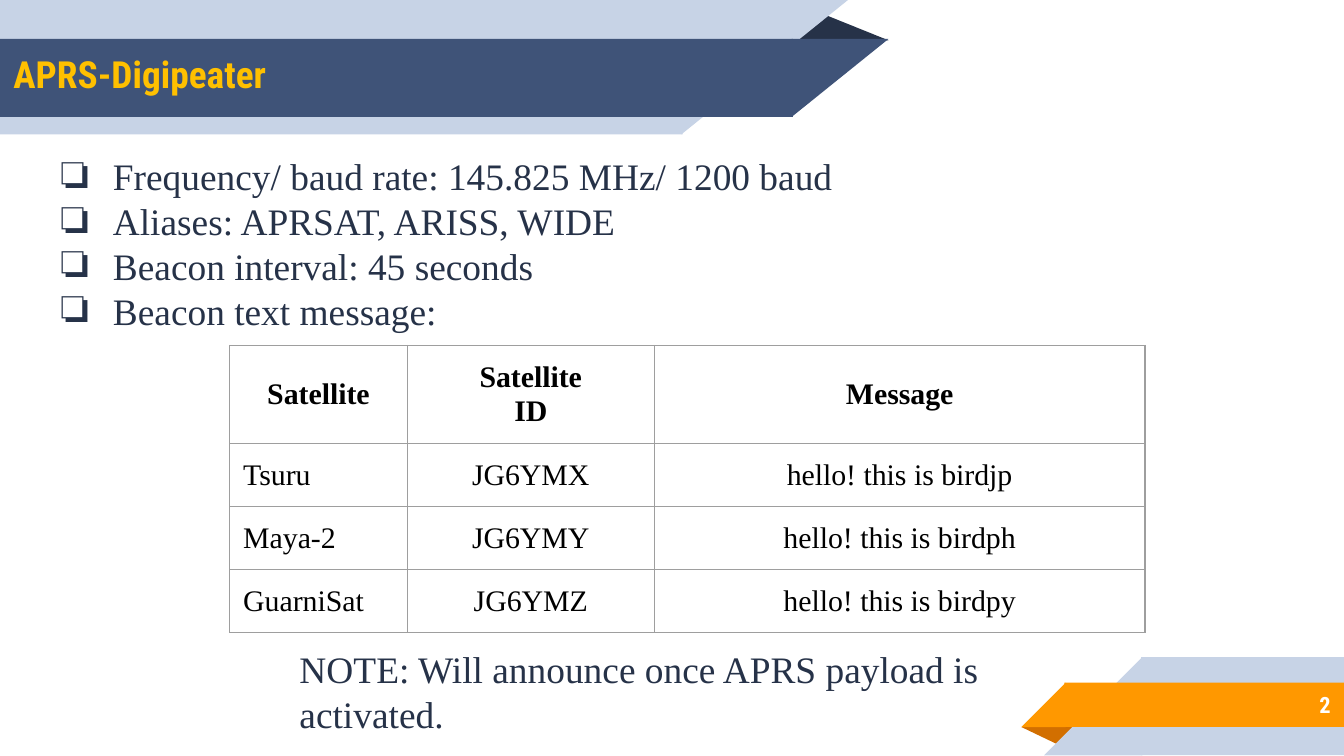
import pptx
import pptx.dml.color
import pptx.enum.shapes
import pptx.enum.text
import pptx.oxml
import pptx.oxml.ns
import pptx.util
from lxml import etree

Inches = pptx.util.Inches
Pt = pptx.util.Pt
RGB = pptx.dml.color.RGBColor.from_string
Kind = pptx.enum.shapes.MSO_SHAPE
Align = pptx.enum.text.PP_ALIGN
Anchor = pptx.enum.text.MSO_ANCHOR
Fit = pptx.enum.text.MSO_AUTO_SIZE
qn = pptx.oxml.ns.qn

theme = {
    "ink": "263248", "navy": "3F5378", "pale": "C7D3E6",
    "rust": "D26F00", "orange": "FF9800", "gold": "FFC000",
    "white": "FFFFFF", "black": "000000", "grid": "9E9E9E",
    "head": "Roboto Condensed", "text": "Times New Roman",
    "big": 20, "cell": 16, "small": 12,
}


def write(para, text, size, color, face="text", bold=False, align=Align.LEFT):
    """Add one styled run to a paragraph."""
    para.alignment = align
    para.space_before = Pt(0)
    run = para.add_run()
    run.text = text
    run.font.name = theme[face]
    run.font.size = Pt(theme[size])
    run.font.bold = bold
    run.font.color.rgb = RGB(theme[color])


def frame(shape, box, inset, anchor=Anchor.TOP):
    """Place a text shape and set its margins; return its text frame."""
    shape.left, shape.top, shape.width, shape.height = map(Inches, box)
    area = shape.text_frame
    area.word_wrap = True
    area.auto_size = Fit.NONE
    area.vertical_anchor = anchor
    area.margin_left = area.margin_right = Inches(0.1)
    area.margin_top = area.margin_bottom = Inches(inset)
    return area


# Widescreen deck, 16 by 9
deck = pptx.Presentation()
deck.slide_width = Inches(10)
deck.slide_height = Inches(10) * 9 // 16
slide = deck.slides.add_slide(deck.slide_layouts[1])
shapes = slide.shapes
title, body = slide.placeholders

# Ribbons: kind, box, colour, rotation, mirrored
ribbons = [
    (Kind.ISOSCELES_TRIANGLE, (5.88, 0.1, 0.73, 0.2), "ink", 0, False),
    (Kind.RECTANGLE, (0, 0, 5.08, 1), "pale", 0, False),
    (Kind.RIGHT_TRIANGLE, (5.07, 0, 1.24, 1), "pale", 180, True),
    (Kind.RECTANGLE, (0, 0.29, 5.9, 0.58), "navy", 0, False),
    (Kind.RIGHT_TRIANGLE, (5.89, 0.29, 0.72, 0.58), "navy", 180, True),
    (Kind.ISOSCELES_TRIANGLE, (7.6, 5.41, 0.43, 0.14), "rust", 180, False),
    (Kind.RECTANGLE, (8.49, 4.89, 1.51, 0.73), "pale", 0, False),
    (Kind.RIGHT_TRIANGLE, (7.77, 4.89, 0.73, 0.73), "pale", 0, True),
    (Kind.RECTANGLE, (7.92, 5.08, 2.08, 0.33), "orange", 0, False),
    (Kind.RIGHT_TRIANGLE, (7.6, 5.08, 0.33, 0.33), "orange", 0, True),
]
for kind, box, color, turn, flip in ribbons:
    part = shapes.add_shape(kind, *map(Inches, box))
    part.shadow.inherit = False
    part.fill.solid()
    part.fill.fore_color.rgb = RGB(theme[color])
    part.line.fill.background()
    part.rotation = turn
    if kind == Kind.ISOSCELES_TRIANGLE:
        part.adjustments[0] = 0.32
    if flip:
        part._element.spPr.find(qn("a:xfrm")).set("flipH", "1")
    # Keep the ribbons behind the placeholders
    title._element.addprevious(part._element)

# Page number
page = frame(shapes.add_textbox(0, 0, 0, 0), (8.38, 5.07, 1.62, 0.35),
             0.1, Anchor.MIDDLE)
write(page.paragraphs[0], "2", "small", "white", "head", True, Align.RIGHT)

# Title
area = frame(title, (0, 0.13, 5.75, 0.84), 0.1, Anchor.MIDDLE)
write(area.paragraphs[0], "APRS-Digipeater", "big", "gold", "head", True)

# Bullet list
points = [
    "Frequency/ baud rate: 145.825 MHz/ 1200 baud",
    "Aliases: APRSAT, ARISS, WIDE",
    "Beacon interval: 45 seconds",
    "Beacon text message:",
]
area = frame(body, (0.24, 1.09, 9.18, 1.68), 0.05)
for row, point in enumerate(points):
    para = area.add_paragraph() if row else area.paragraphs[0]
    props = para._p.get_or_add_pPr()
    props.set("marL", str(Inches(0.5)))
    props.set("indent", str(Inches(-0.39)))
    tint = etree.SubElement(props, qn("a:buClr"))
    etree.SubElement(tint, qn("a:srgbClr"), val=theme["ink"])
    etree.SubElement(props, qn("a:buFont"), typeface=theme["text"])
    etree.SubElement(props, qn("a:buChar"), char="❏")
    write(para, point, "big", "ink")

# Satellite table
rows = [
    ("Satellite", "Satellite\nID", "Message"),
    ("Tsuru", "JG6YMX", "hello! this is birdjp"),
    ("Maya-2", "JG6YMY", "hello! this is birdph"),
    ("GuarniSat", "JG6YMZ", "hello! this is birdpy"),
]
table = shapes.add_table(4, 3, Inches(1.71), Inches(2.57),
                         Inches(6.81), Inches(2.14)).table
table.first_row = table.horz_banding = False
for col, width in zip(table.columns, (1.32, 1.84, 3.65)):
    col.width = Inches(width)
for r, row in enumerate(rows):
    table.rows[r].height = Inches(0.47 if r else 0.73)
    for c, text in enumerate(row):
        cell = table.cell(r, c)
        cell.fill.background()
        cell.vertical_anchor = Anchor.MIDDLE
        cell.margin_left = cell.margin_right = Inches(0.1)
        cell.margin_top = cell.margin_bottom = Inches(0.1)
        align = Align.LEFT if r and c == 0 else Align.CENTER
        area = cell.text_frame
        for n, line in enumerate(text.split("\n")):
            para = area.add_paragraph() if n else area.paragraphs[0]
            write(para, line, "cell", "black", bold=r == 0, align=align)
        # Borders come before the fill
        props = cell._tc.get_or_add_tcPr()
        for n, side in enumerate(("lnL", "lnR", "lnT", "lnB")):
            edge = etree.Element(qn("a:" + side), w=str(Pt(0.75)))
            fill = etree.SubElement(edge, qn("a:solidFill"))
            etree.SubElement(fill, qn("a:srgbClr"), val=theme["grid"])
            props.insert(n, edge)

# Note
area = frame(shapes.add_textbox(0, 0, 0, 0), (2.13, 4.76, 5.55, 0.77), 0.05)
write(area.paragraphs[0],
      "NOTE: Will announce once APRS payload is activated.", "big", "ink")

deck.save("out.pptx")
